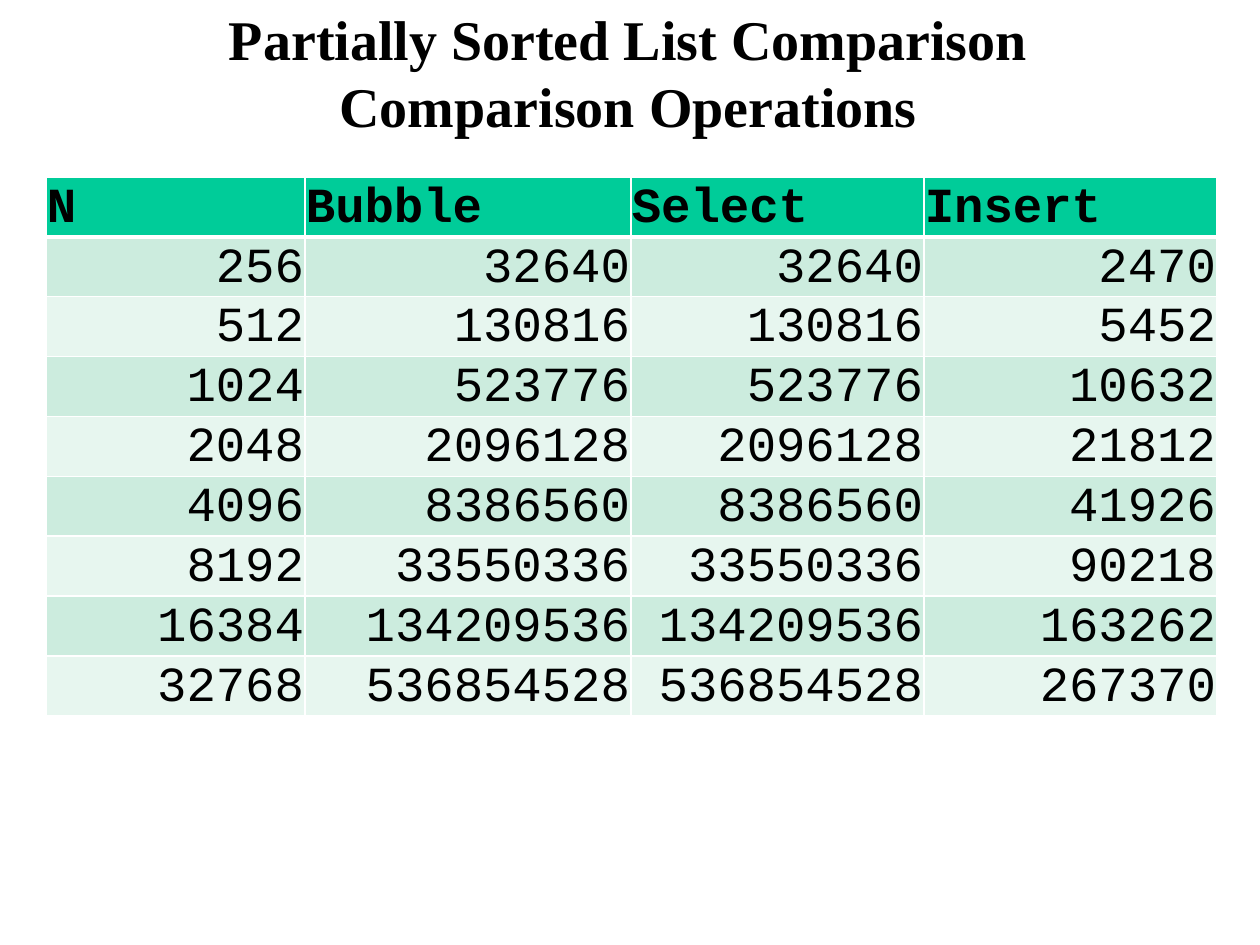
import pptx
import pptx.util
import pptx.dml.color
import pptx.enum.text
import lxml.etree
import pptx.oxml.ns

TITLE = "Partially Sorted List Comparison\vComparison Operations"
HEADS = ("N", "Bubble", "Select", "Insert")
COUNTS = (
    (256, 32640, 32640, 2470),
    (512, 130816, 130816, 5452),
    (1024, 523776, 523776, 10632),
    (2048, 2096128, 2096128, 21812),
    (4096, 8386560, 8386560, 41926),
    (8192, 33550336, 33550336, 90218),
    (16384, 134209536, 134209536, 163262),
    (32768, 536854528, 536854528, 267370),
)
WIDTHS = (259, 326, 293, 293)
ROW = 52

RGB = pptx.dml.color.RGBColor
BLACK = RGB(0, 0, 0)
WHITE = RGB(255, 255, 255)
GREEN = RGB(0x00, 0xCC, 0x99)
BANDS = (RGB(0xCC, 0xEC, 0xDE), RGB(0xE7, 0xF6, 0xEF))

ALIGN = pptx.enum.text.PP_ALIGN
ANCHOR = pptx.enum.text.MSO_ANCHOR


def px(n):
    return pptx.util.Emu(n * 914400 // 126)


def style(para, face, size, bold, align):
    para.alignment = align
    for run in para.runs:
        font = run.font
        font.name, font.size, font.bold = face, pptx.util.Pt(size), bold
        font.color.rgb = BLACK


def border(cell, top, base):
    props = cell._tc.get_or_add_tcPr()
    qn = pptx.oxml.ns.qn
    for side, width in (("L", 1), ("R", 1), ("T", top), ("B", base)):
        line = lxml.etree.SubElement(
            props, qn("a:ln" + side), w=str(pptx.util.Pt(width)))
        fill = lxml.etree.SubElement(line, qn("a:solidFill"))
        lxml.etree.SubElement(fill, qn("a:srgbClr"), val=str(WHITE))


def add_title(slide):
    box = slide.shapes.add_textbox(px(93), px(8), px(1071), px(127))
    frame = box.text_frame
    frame.word_wrap = True
    frame.vertical_anchor = ANCHOR.MIDDLE
    frame.text = TITLE
    style(frame.paragraphs[0], "Times New Roman", 32, True, ALIGN.CENTER)


def add_counts(slide):
    rows = (HEADS,) + COUNTS
    table = slide.shapes.add_table(
        len(rows), len(HEADS), px(46), px(177),
        px(sum(WIDTHS)), px(ROW * len(rows))).table
    for col, width in zip(table.columns, WIDTHS):
        col.width = px(width)
    for r, row in enumerate(rows):
        table.rows[r].height = px(ROW)
        head = r == 0
        for c, value in enumerate(row):
            cell = table.cell(r, c)
            border(cell, 3 if r == 1 else 1, 3 if head else 1)
            cell.fill.solid()
            cell.fill.fore_color.rgb = GREEN if head else BANDS[(r - 1) % 2]
            cell.margin_left = cell.margin_right = cell.margin_top = px(1)
            cell.margin_bottom = 0
            cell.vertical_anchor = ANCHOR.BOTTOM
            cell.text_frame.text = str(value)
            style(cell.text_frame.paragraphs[0], "Courier New", 28, head,
                  ALIGN.LEFT if head else ALIGN.RIGHT)


def main():
    deck = pptx.Presentation()
    deck.slide_width, deck.slide_height = px(1260), px(945)
    slide = deck.slides.add_slide(deck.slide_layouts[6])
    add_title(slide)
    add_counts(slide)
    deck.save("out.pptx")


if __name__ == "__main__":
    main()
